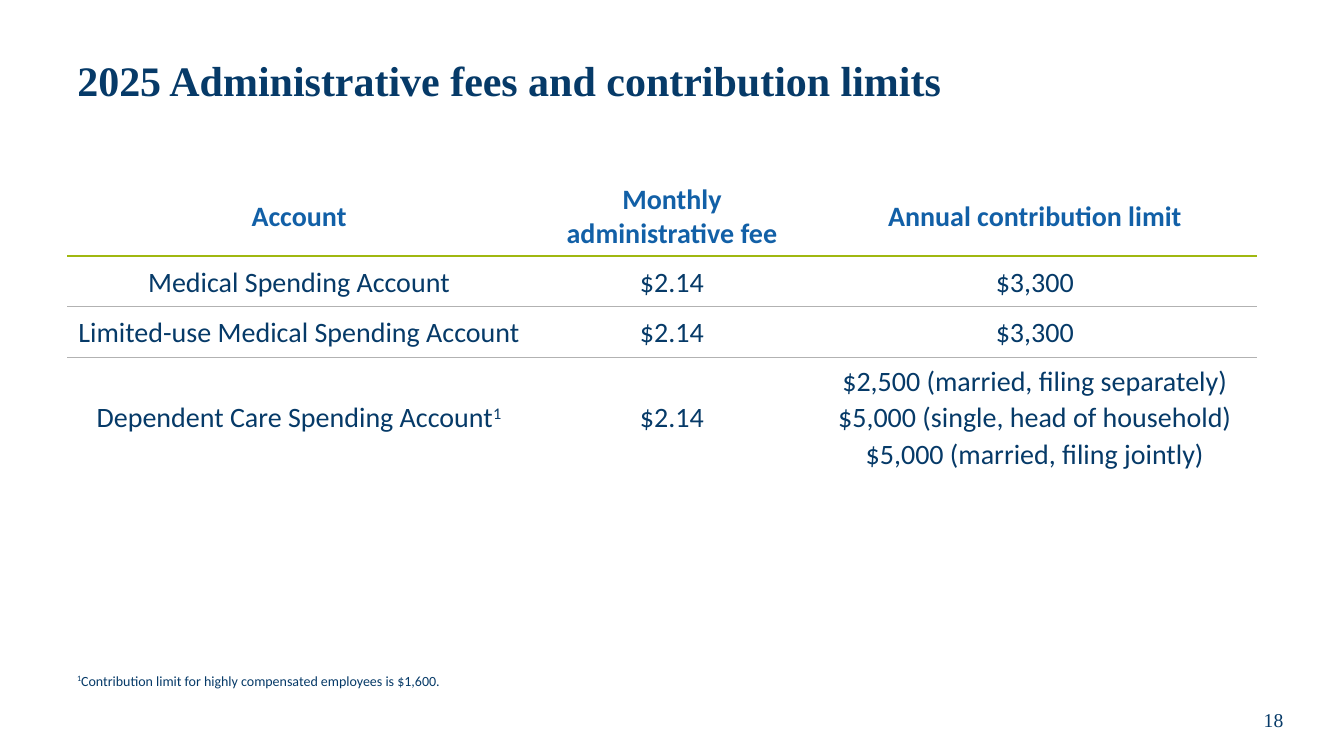
"""Build the slide on 2025 administrative fees and contribution limits."""
from dataclasses import dataclass

from lxml.etree import SubElement
from pptx import Presentation
from pptx.dml.color import RGBColor
from pptx.enum.text import MSO_ANCHOR, MSO_AUTO_SIZE, PP_ALIGN
from pptx.oxml import parse_xml
from pptx.oxml.ns import nsdecls, qn
from pptx.util import Pt


@dataclass(frozen=True)
class Theme:
    navy: str = "063A68"
    blue: str = "1260A7"
    green: str = "A0B810"
    gray: str = "B2B2B2"
    heading_font: str = "Times New Roman"
    body_font: str = "Calibri"
    title_size: int = 30
    table_size: int = 20
    number_size: int = 14
    note_size: int = 10


class SlideBuilder:
    def __init__(self, slide, theme):
        self.s = slide
        self.theme = theme

    def place(self, sp, box):
        sp.left, sp.top, sp.width, sp.height = map(Pt, box)

    def add_runs(self, p, text, size, font, color, bold=False):
        for i, part in enumerate(text.split("^")):
            if not part:
                continue
            r = p.add_run()
            r.text = part
            r.font.size = Pt(size)
            r.font.name = font
            r.font.bold = bold
            r.font.color.rgb = RGBColor.from_string(color)
            if i % 2:
                r._r.get_or_add_rPr().set("baseline", "30000")

    def title(self, text, box):
        t = self.theme
        sp = self.s.shapes.title
        self.place(sp, box)
        tf = sp.text_frame
        tf.vertical_anchor = MSO_ANCHOR.MIDDLE
        tf.auto_size = MSO_AUTO_SIZE.NONE
        p = tf.paragraphs[0]
        p.alignment = PP_ALIGN.LEFT
        p.line_spacing = 0.9
        self.add_runs(p, text, t.title_size, t.heading_font, t.navy, True)

    def text(self, text, box, size, font, align=PP_ALIGN.LEFT, anchor=MSO_ANCHOR.TOP):
        sp = self.s.shapes.add_textbox(*map(Pt, box))
        tf = sp.text_frame
        tf.word_wrap = True
        tf.vertical_anchor = anchor
        p = tf.paragraphs[0]
        p.alignment = align
        self.add_runs(p, text, size, font, self.theme.navy)

    def borders(self, cell, top, bottom):
        tcPr = cell._tc.get_or_add_tcPr()
        sides = (("lnL", None), ("lnR", None), ("lnT", top), ("lnB", bottom))
        for i, (side, line) in enumerate(sides):
            ln = parse_xml(f"<a:{side} {nsdecls('a')}/>")
            if line:
                color, width = line
                ln.set("w", str(Pt(width)))
                fill = SubElement(ln, qn("a:solidFill"))
                SubElement(fill, qn("a:srgbClr")).set("val", color)
            else:
                SubElement(ln, qn("a:noFill"))
            tcPr.insert(i, ln)

    def table(self, rows, left, top, widths, heights):
        t = self.theme
        frame = self.s.shapes.add_table(
            len(rows), len(widths), Pt(left), Pt(top), Pt(sum(widths)), Pt(sum(heights)))
        tbl = frame.table
        tbl.first_row = tbl.horz_banding = False
        for col, width in zip(tbl.columns, widths):
            col.width = Pt(width)
        for row, height in zip(tbl.rows, heights):
            row.height = Pt(height)
        rules = [None, (t.green, 2.25)] + [(t.gray, 0.5)] * (len(rows) - 2) + [None]
        for i, values in enumerate(rows):
            header = i == 0
            for j, value in enumerate(values):
                cell = tbl.cell(i, j)
                cell.fill.background()
                cell.vertical_anchor = MSO_ANCHOR.MIDDLE
                self.borders(cell, rules[i], rules[i + 1])
                tf = cell.text_frame
                for k, line in enumerate(value.split("\n")):
                    p = tf.add_paragraph() if k else tf.paragraphs[0]
                    p.alignment = PP_ALIGN.CENTER
                    if not header:
                        p.line_spacing = 1.07
                    self.add_runs(p, line, t.table_size, t.body_font,
                                  t.blue if header else t.navy, header)


ROWS = [
    ("Account", "Monthly administrative fee", "Annual contribution limit"),
    ("Medical Spending Account", "$2.14", "$3,300"),
    ("Limited-use Medical Spending Account", "$2.14", "$3,300"),
    ("Dependent Care Spending Account^1^", "$2.14",
     "$2,500 (married, filing separately)\n"
     "$5,000 (single, head of household)\n"
     "$5,000 (married, filing jointly)"),
]


def main():
    prs = Presentation()
    prs.slide_width, prs.slide_height = Pt(960), Pt(540)
    theme = Theme()
    b = SlideBuilder(prs.slides.add_slide(prs.slide_layouts[5]), theme)
    b.title("2025 Administrative fees and contribution limits", (48, 18, 864, 82.8))
    b.table(ROWS, 48, 126.7, (331.2, 201.6, 316.8), (56, 36, 36, 82))
    b.text("^1^Contribution limit for highly compensated employees is $1,600.",
           (48, 476.6, 612.7, 19.4), theme.note_size, theme.body_font)
    b.text("18", (867.6, 496, 84.2, 36), theme.number_size, theme.heading_font,
           PP_ALIGN.CENTER, MSO_ANCHOR.MIDDLE)
    prs.save("out.pptx")


if __name__ == "__main__":
    main()
